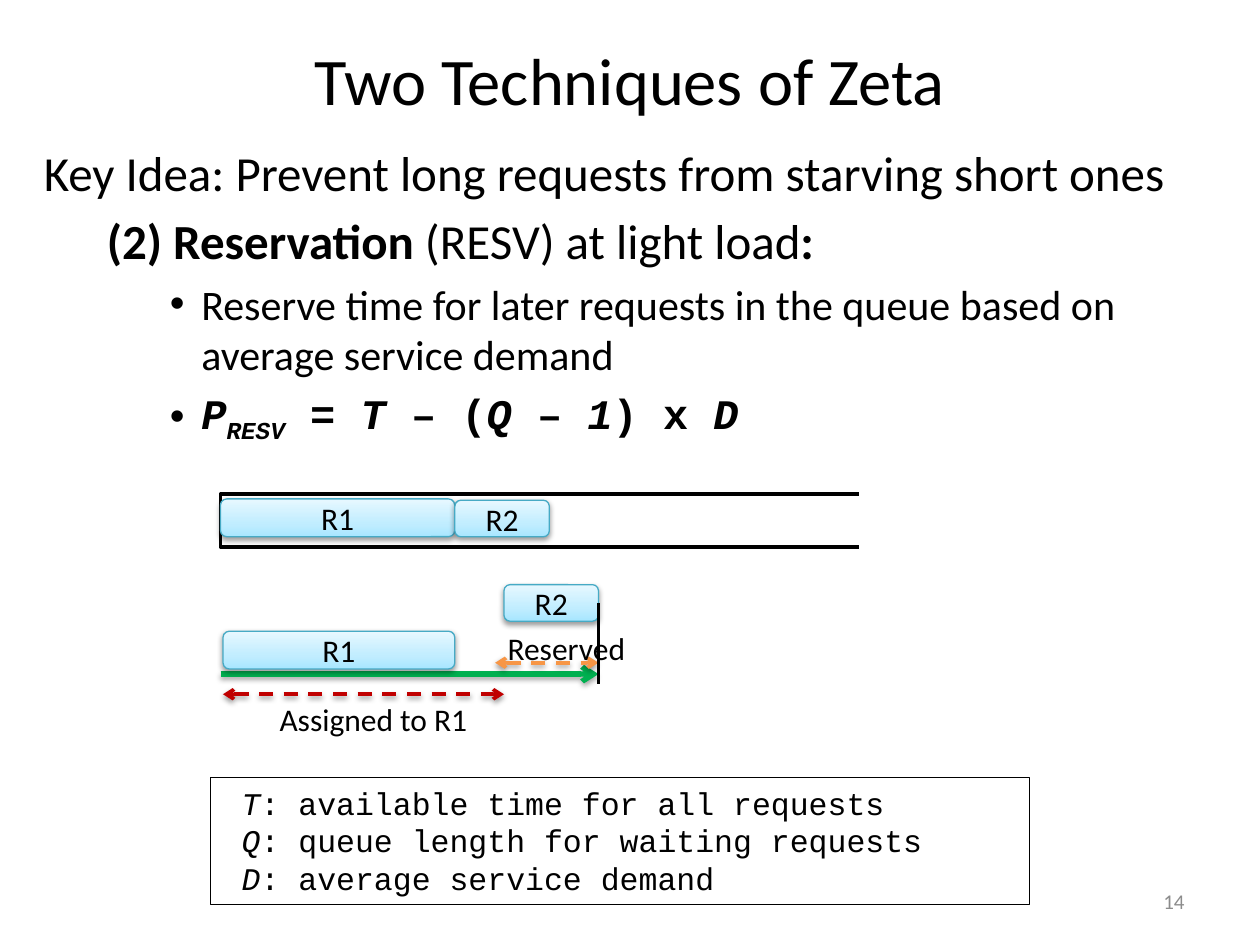
from lxml import etree
from pptx import Presentation
from pptx.dml.color import RGBColor
from pptx.enum.dml import MSO_LINE
from pptx.enum.shapes import MSO_CONNECTOR, MSO_SHAPE
from pptx.enum.text import MSO_ANCHOR, PP_ALIGN
from pptx.oxml.ns import qn
from pptx.util import Inches, Pt

BLACK = RGBColor(0, 0, 0)
WHITE = RGBColor(255, 255, 255)
GRAY = RGBColor(0x8C, 0x8C, 0x8C)
TEAL = RGBColor(0x46, 0xAA, 0xC5)
GREEN = RGBColor(0, 0xB0, 0x50)
ORANGE = RGBColor(0xF7, 0x96, 0x46)
RED = RGBColor(0xC0, 0, 0)
STOPS = [(0, RGBColor(0xA7, 0xE6, 0xFF)), (35, RGBColor(0xC1, 0xED, 0xFF)),
         (100, RGBColor(0xE7, 0xF8, 0xFF))]
SANS = "Calibri"
MONO = "Courier New"
RECT = MSO_SHAPE.RECTANGLE
ROUND = MSO_SHAPE.ROUNDED_RECTANGLE
STRAIGHT = MSO_CONNECTOR.STRAIGHT
DASH = MSO_LINE.DASH
TOP, MIDDLE = MSO_ANCHOR.TOP, MSO_ANCHOR.MIDDLE
LEFT, CENTER, RIGHT = PP_ALIGN.LEFT, PP_ALIGN.CENTER, PP_ALIGN.RIGHT


def node(parent, tag, **attrs):
    item = etree.SubElement(parent, qn(tag))
    for name, value in attrs.items():
        item.set(name, str(value))
    return item


def write(par, text, size=18, font=SANS, color=BLACK, bold=False, italic=False, base=0):
    run = par.add_run()
    run.text = text
    run.font.size = Pt(size)
    run.font.name = font
    run.font.color.rgb = color
    run.font.bold = bold
    run.font.italic = italic
    if base:
        run.font._element.set("baseline", str(base * 1000))


def indent(par, margin, first=0.0, bullet=False):
    props = par._p.get_or_add_pPr()
    props.set("marL", str(Inches(margin)))
    props.set("indent", str(Inches(first)))
    if bullet:
        node(props, "a:buFont", typeface="Arial")
        node(props, "a:buChar", char="•")
    else:
        node(props, "a:buNone")


def shade(shape, alpha=38, dist=1.6):
    props = shape._element.spPr
    effects = props.find(qn("a:effectLst"))
    if effects is None:
        effects = node(props, "a:effectLst")
    outer = node(effects, "a:outerShdw", blurRad=Pt(3.1), dist=Pt(dist),
                 dir=5400000, rotWithShape=0)
    color = node(outer, "a:srgbClr", val=BLACK)
    node(color, "a:alpha", val=alpha * 1000)


def frame(slide, box, anchor=TOP, wrap=True):
    area = slide.shapes.add_textbox(*map(Inches, box)).text_frame
    area.word_wrap = wrap
    area.vertical_anchor = anchor
    return area


def label(slide, box, text, align=LEFT, anchor=TOP, wrap=True, **style):
    par = frame(slide, box, anchor, wrap).paragraphs[0]
    par.alignment = align
    write(par, text, **style)


def panel(slide, box, kind, color, width, fill=None):
    shape = slide.shapes.add_shape(kind, *map(Inches, box))
    shape.shadow.inherit = False
    if fill is None:
        shape.fill.background()
    else:
        shape.fill.solid()
        shape.fill.fore_color.rgb = fill
    shape.line.color.rgb = color
    shape.line.width = Pt(width)
    return shape


def request(slide, box, text):
    shape = panel(slide, box, ROUND, TEAL, 0.75, WHITE)
    props = shape._element.spPr
    solid = props.find(qn("a:solidFill"))
    grad = etree.Element(qn("a:gradFill"), rotWithShape="1")
    stops = node(grad, "a:gsLst")
    for pos, color in STOPS:
        node(node(stops, "a:gs", pos=pos * 1000), "a:srgbClr", val=color)
    node(grad, "a:lin", ang=16200000, scaled=0)
    props.replace(solid, grad)
    shade(shape)
    shape.text_frame.vertical_anchor = MIDDLE
    par = shape.text_frame.paragraphs[0]
    par.alignment = CENTER
    write(par, text)
    return shape


def line(slide, start, end, color, width, dash=None, head=False, tail=False):
    link = slide.shapes.add_connector(STRAIGHT, *map(Inches, start + end))
    link.line.color.rgb = color
    link.line.width = Pt(width)
    if dash:
        link.line.dash_style = dash
    stroke = link.line._get_or_add_ln()
    if head:
        node(stroke, "a:headEnd", type="arrow")
    if tail:
        node(stroke, "a:tailEnd", type="arrow")
    node(link._element.spPr, "a:effectLst")
    return link


def body(slide, box):
    area = frame(slide, box)
    bold, slant = {"bold": True}, {"bold": True, "italic": True}
    rows = [
        (28, SANS, 0.38, -0.38, False,
         [("Key Idea: Prevent long requests from starving short ones", {})]),
        (28, SANS, 0.81, -0.31, False,
         [("(2) Reservation", bold), (" (RESV) at light load", {}), (":", bold)]),
        (24, SANS, 1.25, -0.25, True,
         [("Reserve time for later requests in the queue based on "
           "average service demand", {})]),
        (24, MONO, 1.25, -0.25, True,
         [("P", slant), ("RESV", {**slant, "base": -25}), (" = ", bold),
          ("T", slant), (" – (", bold), ("Q", slant), (" – ", bold),
          ("1", slant), (") x ", bold), ("D", slant)]),
    ]
    for i, (size, font, margin, first, bullet, runs) in enumerate(rows):
        par = area.add_paragraph() if i else area.paragraphs[0]
        par.space_before = Pt(size * 0.2)
        indent(par, margin, first, bullet)
        for text, style in runs:
            write(par, text, size=size, font=font, **style)


def legend(slide, box):
    area = panel(slide, box, RECT, BLACK, 0.75).text_frame
    area.vertical_anchor = TOP
    rows = [("T", "available time for all requests"),
            ("Q", "queue length for waiting requests"),
            ("D", "average service demand")]
    for i, (name, text) in enumerate(rows):
        par = area.add_paragraph() if i else area.paragraphs[0]
        par.alignment = LEFT
        indent(par, 0.15)
        write(par, name, font=MONO, italic=True)
        write(par, ": " + text, font=MONO)


def queue(slide, box):
    x, y, w, h = box
    panel(slide, box, RECT, BLACK, 2, WHITE)
    request(slide, (x, y + 0.04, 1.86, 0.3), "R1")
    request(slide, (x + 1.86, y + 0.05, 0.75, 0.29), "R2")
    panel(slide, (x + w - 0.17, y - 0.17, 0.25, 0.75), RECT, WHITE, 2, WHITE)


def timeline(slide, box):
    x, y, w, h = box
    end = x + w
    split = end - 0.75
    total = line(slide, (x, y + 0.71), (end, y + 0.71), GREEN, 3, tail=True)
    shade(total, 35, 1.8)
    request(slide, (x + 0.02, y + 0.37, 1.84, 0.3), "R1")
    held = line(slide, (split - 0.07, y + 0.62), (end, y + 0.62), ORANGE, 2,
                DASH, head=True, tail=True)
    shade(held)
    label(slide, (split - 0.07, y + 0.3, 1.15, 0.4), "Reserved", wrap=False)
    last = request(slide, (split, y, 0.75, 0.29), "R2")
    given = line(slide, (x + 0.02, y + 0.87), (split, y + 0.87), RED, 2,
                 DASH, head=True, tail=True)
    shade(given)
    label(slide, (x + 0.37, y + 0.87, 1.71, 0.4), "Assigned to R1", wrap=False)
    limit = line(slide, (end, y + 0.13), (end, y + 0.79), BLACK, 1.5)
    limit.begin_connect(last, 3)


def main():
    deck = Presentation()
    deck.slide_width, deck.slide_height = Inches(10), Inches(7.5)
    slide = deck.slides.add_slide(deck.slide_layouts[6])
    label(slide, (0.5, 0, 9, 1.25), "Two Techniques of Zeta", CENTER, MIDDLE, size=38)
    body(slide, (0.25, 1.08, 9.5, 5.94))
    legend(slide, (1.67, 6.17, 6.5, 1.01))
    label(slide, (7.17, 6.95, 2.33, 0.4), "14", RIGHT, MIDDLE, size=12, color=GRAY)
    queue(slide, (1.75, 3.92, 5.25, 0.42))
    timeline(slide, (1.75, 4.64, 3, 1.27))
    deck.save("out.pptx")


if __name__ == "__main__":
    main()
